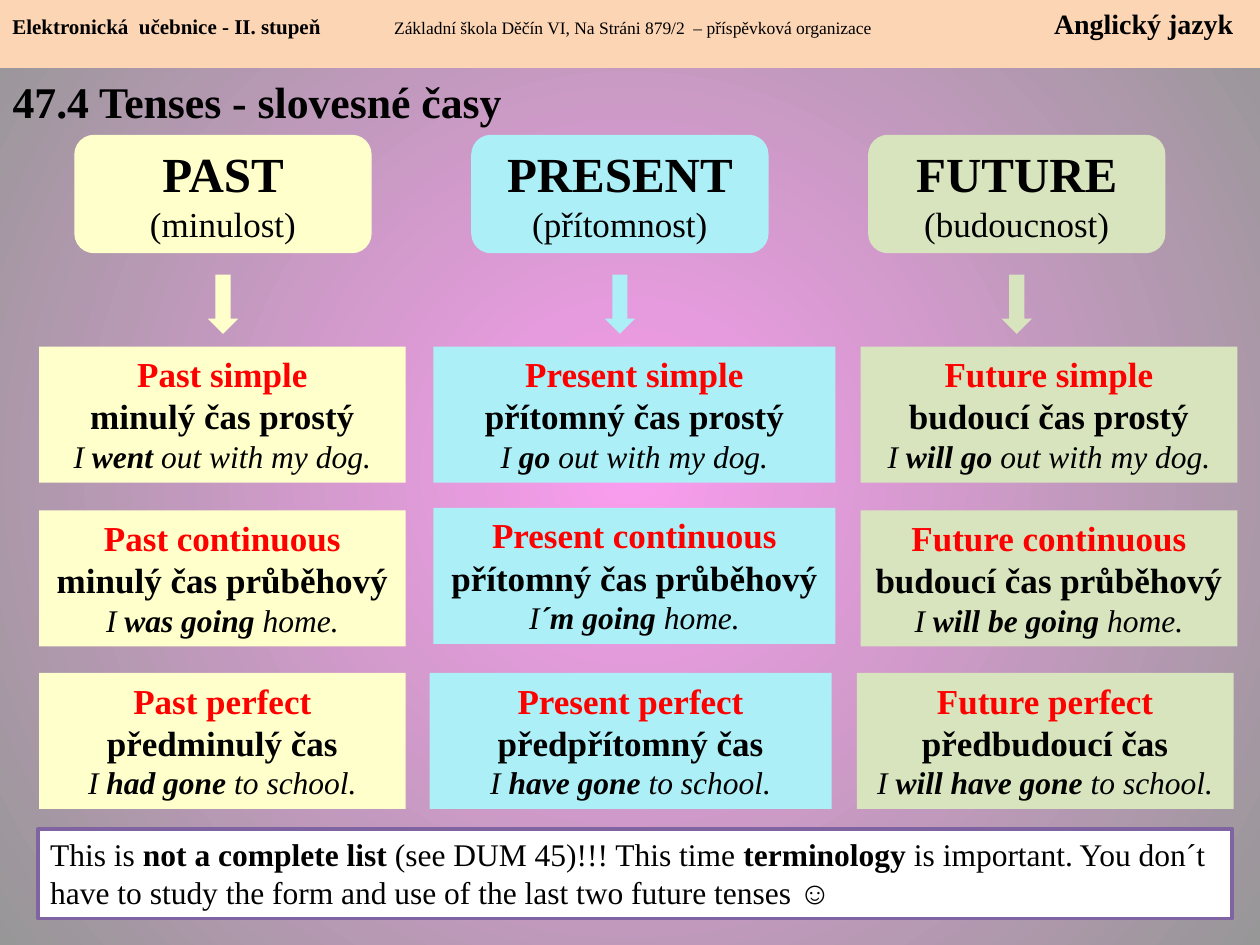
from lxml import etree
from pptx import Presentation
from pptx.dml.color import RGBColor
from pptx.enum.shapes import MSO_SHAPE
from pptx.enum.text import MSO_ANCHOR, MSO_AUTO_SIZE, PP_ALIGN
from pptx.oxml.ns import qn
from pptx.util import Inches, Pt

RECT, ROUNDED, ARROW = MSO_SHAPE.RECTANGLE, MSO_SHAPE.ROUNDED_RECTANGLE, MSO_SHAPE.DOWN_ARROW
TOP, MIDDLE = MSO_ANCHOR.TOP, MSO_ANCHOR.MIDDLE
LEFT, CENTER = PP_ALIGN.LEFT, PP_ALIGN.CENTER
FIXED = MSO_AUTO_SIZE.NONE

FONT = "Times New Roman"
BLACK, RED, WHITE, PEACH, PURPLE = "000000", "FF0000", "FFFFFF", "FCD5B5", "8064A2"
BACKGROUND = ("FA9CEF", "979797")

TITLE = "47.4 Tenses - slovesné časy"
HEADER = [
    ("Elektronická  učebnice - II. stupeň", 12, True),
    ("\tZákladní škola Děčín VI, Na Stráni 879/2  – příspěvková organizace", 10, False),
    ("\tAnglický jazyk", 16, True),
]
HEADER_TABS = [(3.03, "l"), (9.69, "r")]
NOTE = [
    ("This is ", False), ("not a complete list ", True), ("(see DUM 45)!!! This time ", False),
    ("terminology", True),
    (" is important. You don´t have to study the form and use of the last two future tenses ☺", False),
]
TENSES = [
    {"name": "PAST", "czech": "(minulost)", "color": "FFFFCC", "width": 2.91,
     "places": [(0.31, 2.75), (0.31, 4.05), (0.31, 5.34)],
     "cards": [
         ("Past simple", "minulý čas prostý", ("I ", "went", " out with my dog.")),
         ("Past continuous", "minulý čas průběhový", ("I ", "was going ", "home.")),
         ("Past perfect", "předminulý čas", ("I ", "had gone ", "to school."))]},
    {"name": "PRESENT", "czech": "(přítomnost)", "color": "ACEFF6", "width": 3.19,
     "places": [(3.44, 2.75), (3.44, 4.03), (3.41, 5.34)],
     "cards": [
         ("Present simple", "přítomný čas prostý", ("I ", "go", " out with my dog.")),
         ("Present continuous", "přítomný čas průběhový", ("I", "´m going ", "home.")),
         ("Present perfect", "předpřítomný čas", ("I ", "have gone ", "to school."))]},
    {"name": "FUTURE", "czech": "(budoucnost)", "color": "D7E4BD", "width": 2.99,
     "places": [(6.83, 2.75), (6.83, 4.05), (6.80, 5.34)],
     "cards": [
         ("Future simple", "budoucí čas prostý", ("I ", "will go", " out with my dog.")),
         ("Future continuous", "budoucí čas průběhový", ("I ", "will be going", " home.")),
         ("Future perfect", "předbudoucí čas", ("I ", "will have gone ", "to school."))]},
]
COLUMN_STEP = 3.15


def rgb(value):
    """Turn a hex string into a colour."""
    return RGBColor.from_string(value)


def span(text, size, bold=False, color=BLACK, italic=False):
    """Describe one run of text."""
    return text, color, {"name": FONT, "size": Pt(size), "bold": bold, "italic": italic}


def write(box, lines, align=LEFT, anchor=TOP):
    """Fill a shape with paragraphs, each a list of spans."""
    frame = box.text_frame
    settings = {"word_wrap": True, "auto_size": FIXED, "vertical_anchor": anchor}
    for name, value in settings.items():
        setattr(frame, name, value)
    for index, spans in enumerate(lines):
        para = frame.add_paragraph() if index else frame.paragraphs[0]
        para.alignment = align
        for text, color, style in spans:
            run = para.add_run()
            run.text = text
            run.font.color.rgb = rgb(color)
            for name, value in style.items():
                setattr(run.font, name, value)


def add_box(page, kind, place, fill, line=None):
    """Add a filled shape without shadow."""
    box = page.shapes.add_shape(kind, *map(Inches, place))
    box.shadow.inherit = False
    box.fill.solid()
    box.fill.fore_color.rgb = rgb(fill)
    if line:
        box.line.color.rgb = rgb(line)
        box.line.width = Pt(2)
    else:
        box.line.fill.background()
    return box


def paint_background(page):
    """Give the page a gradient spreading from its centre."""
    fill = page.background.fill
    fill.gradient()
    for stop, color in zip(fill.gradient_stops, BACKGROUND):
        stop.color.rgb = rgb(color)
    gradient = page.element.find(".//" + qn("a:gradFill"))
    gradient.remove(gradient.find(qn("a:lin")))
    circle = etree.SubElement(gradient, qn("a:path"), {"path": "circle"})
    etree.SubElement(circle, qn("a:fillToRect"), dict.fromkeys("ltrb", "50000"))


def add_title(page):
    """Place the page title."""
    title = page.shapes.title
    bounds = {"left": 0, "top": 0.54, "width": 10, "height": 0.53}
    for name, value in bounds.items():
        setattr(title, name, Inches(value))
    write(title, [[span(TITLE, 25, True)]])


def add_header(page):
    """Add the top band, its three parts set on tab stops."""
    band = add_box(page, RECT, (0, 0, 10, 0.54), PEACH)
    write(band, [[span(*part) for part in HEADER]])
    properties = band.text_frame.paragraphs[0]._p.get_or_add_pPr()
    stops = etree.SubElement(properties, qn("a:tabLst"))
    for position, align in HEADER_TABS:
        etree.SubElement(stops, qn("a:tab"), {"pos": str(Inches(position)), "algn": align})


def add_tense(page, column, tense):
    """Add one column: heading, arrow and three cards."""
    left, color = 0.59 + column * COLUMN_STEP, tense["color"]
    heading = add_box(page, ROUNDED, (left, 1.07, 2.36, 0.94), color)
    write(heading, [[span(tense["name"], 28, True)], [span(tense["czech"], 20)]], CENTER, MIDDLE)
    add_box(page, ARROW, (left + 1.06, 2.18, 0.24, 0.47), color)
    for place, (name, czech, example) in zip(tense["places"], tense["cards"]):
        card = add_box(page, RECT, (*place, tense["width"], 1.08), color)
        sentence = [span(text, 18, index == 1, italic=True) for index, text in enumerate(example)]
        write(card, [[span(name, 20, True, RED)], [span(czech, 20, True)], sentence], CENTER)


def main():
    """Build and save the deck."""
    deck = Presentation()
    deck.slide_width, deck.slide_height = Inches(10), Inches(7.5)
    page = deck.slides.add_slide(deck.slide_layouts[5])
    paint_background(page)
    add_title(page)
    add_header(page)
    for column, tense in enumerate(TENSES):
        add_tense(page, column, tense)
    note = add_box(page, RECT, (0.3, 6.58, 9.48, 0.71), WHITE, PURPLE)
    write(note, [[span(text, 18, bold) for text, bold in NOTE]])
    deck.save("out.pptx")


if __name__ == "__main__":
    main()
